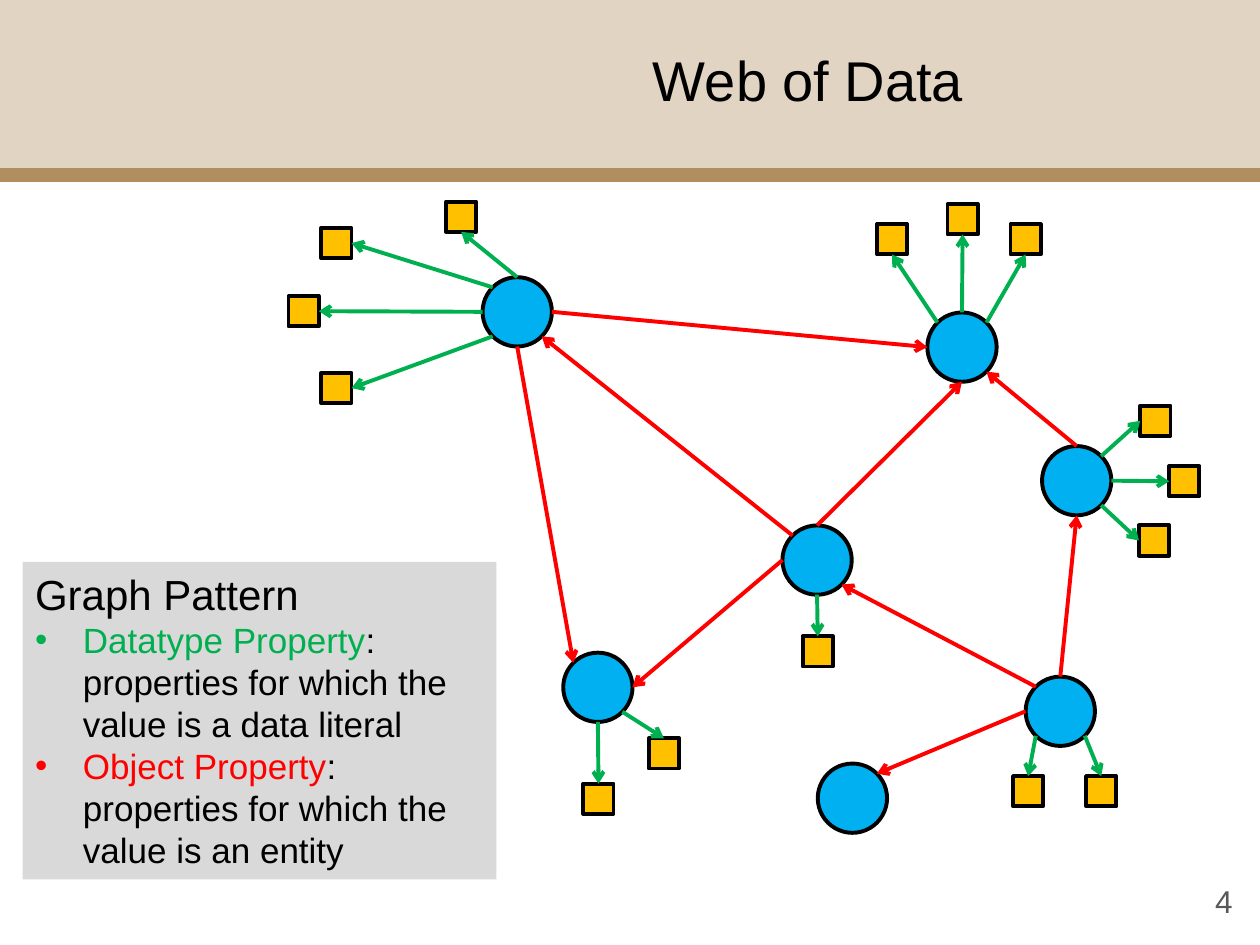
from math import sqrt
from lxml.etree import SubElement
from pptx import Presentation
from pptx.dml.color import RGBColor
from pptx.enum.shapes import MSO_CONNECTOR as Connector, MSO_SHAPE as Shape
from pptx.enum.text import MSO_ANCHOR as Anchor, MSO_AUTO_SIZE as AutoSize, PP_ALIGN as Align
from pptx.oxml.ns import qn
from pptx.util import Inches, Pt

FONT = "Arial"
COLORS = {
    "band": "B18E5F", "panel": "D9D9D9", "text": "000000", "number": "595959",
    "entity": "00B0F0", "literal": "FFC000", "outline": "000000",
    "datatype": "00B050", "object": "FF0000",
}
TITLE = "Web of Data"
SLIDE_NUMBER = "4"
PANEL_HEADING = "Graph Pattern"
PANEL_ITEMS = [
    ("Datatype Property", ": properties for which the value is a data literal", "datatype"),
    ("Object Property", ": properties for which the value is an entity", "object"),
]

# Entities: left and top of each circle
ENTITY_SIZE = 0.55
ENTITIES = {
    "north west": (3.83, 2.2), "north east": (7.36, 2.48), "south west": (4.47, 5.18),
    "centre": (6.21, 4.17), "east": (8.27, 3.54), "south east": (8.14, 5.37),
    "south": (6.49, 6.06),
}
# Literals: entity, side it leaves from, left, top, side of the square it reaches
LITERAL_SIZE = 0.24
LITERALS = [
    ("north west", "top left", 2.55, 1.81, "right"),
    ("north west", "top", 3.54, 1.6, "bottom"),
    ("north west", "bottom left", 2.55, 2.96, "right"),
    ("north west", "left", 2.29, 2.35, "right"),
    ("north east", "top left", 6.96, 1.78, "bottom"),
    ("north east", "top", 7.52, 1.62, "bottom"),
    ("north east", "top right", 8.02, 1.78, "bottom"),
    ("east", "top right", 9.05, 3.22, "left"),
    ("east", "right", 9.28, 3.7, "left"),
    ("east", "bottom right", 9.04, 4.17, "left"),
    ("south west", "bottom right", 5.15, 5.86, "top"),
    ("south west", "bottom", 4.63, 6.22, "top"),
    ("centre", "bottom", 6.37, 5.05, "top"),
    ("south east", "bottom right", 8.62, 6.16, "top"),
    ("south east", "bottom left", 8.04, 6.16, "top"),
]
# Links between entities: from, side, to, side
LINKS = [
    ("north west", "right", "north east", "left"),
    ("north west", "bottom", "south west", "top left"),
    ("centre", "left", "south west", "right"),
    ("centre", "top left", "north west", "bottom right"),
    ("centre", "top", "north east", "bottom"),
    ("east", "top", "north east", "bottom right"),
    ("south east", "top", "east", "bottom"),
    ("south east", "top left", "centre", "bottom right"),
    ("south east", "left", "south", "top right"),
]
SQUARE_SITES = {"top": 0, "left": 1, "bottom": 2, "right": 3}


def rgb(name):
    return RGBColor.from_string(COLORS[name])


def rim_point(entity, side):
    """Point on the circle's rim at a side or diagonal."""
    words = side.split()
    x = ("right" in words) - ("left" in words)
    y = ("bottom" in words) - ("top" in words)
    reach = ENTITY_SIZE / 2 / sqrt(x * x + y * y)
    left, top = ENTITIES[entity]
    return left + ENTITY_SIZE / 2 + x * reach, top + ENTITY_SIZE / 2 + y * reach


def add_box(slide, kind, left, top, width, height, fill, outline=None):
    shape = slide.shapes.add_shape(kind, Inches(left), Inches(top), Inches(width), Inches(height))
    shape.shadow.inherit = False
    shape.fill.solid()
    shape.fill.fore_color.rgb = rgb(fill)
    if outline:
        shape.line.color.rgb = rgb(outline)
        shape.line.width = Pt(2.25)
    else:
        shape.line.fill.background()
    return shape


def add_line(slide, start, end, color, width=2.25, arrow=True):
    line = slide.shapes.add_connector(Connector.STRAIGHT, *map(Inches, start + end))
    line.line.color.rgb = rgb(color)
    line.line.width = Pt(width)
    if arrow:
        SubElement(line.line._get_or_add_ln(), qn("a:tailEnd"), type="arrow")
    SubElement(line._element.spPr, qn("a:effectLst"))
    return line


def format_run(run, size, color):
    run.font.name = FONT
    run.font.size = Pt(size)
    run.font.color.rgb = rgb(color)


def add_header(slide):
    band = add_box(slide, Shape.RECTANGLE, 0, 0, 10, 1.42, "band")
    color = band._element.spPr.find(qn("a:solidFill"))[0]
    SubElement(color, qn("a:alpha"), val="38000")
    add_line(slide, (0, 1.39), (10, 1.39), "band", 8, arrow=False)

    title = slide.shapes.title
    title.left, title.top, title.width, title.height = map(Inches, (2.83, 0, 7.17, 1.25))
    title.text_frame.text = TITLE
    title.text_frame.vertical_anchor = Anchor.MIDDLE
    paragraph = title.text_frame.paragraphs[0]
    paragraph.alignment = Align.CENTER
    format_run(paragraph.runs[0], 32, "text")
    # Title goes in front of the band
    slide.shapes._spTree.append(title._element)


def add_slide_number(slide):
    box = slide.shapes.add_textbox(Inches(9.33), Inches(6.95), Inches(0.55), Inches(0.5))
    box.text_frame.word_wrap = True
    box.text_frame.text = SLIDE_NUMBER
    paragraph = box.text_frame.paragraphs[0]
    paragraph.alignment = Align.RIGHT
    format_run(paragraph.runs[0], 18, "number")


def add_graph(slide):
    for left, top in ENTITIES.values():
        add_box(slide, Shape.OVAL, left, top, ENTITY_SIZE, ENTITY_SIZE, "entity", "outline")
    for entity, side, left, top, square_side in LITERALS:
        square = add_box(slide, Shape.RECTANGLE, left, top, LITERAL_SIZE, LITERAL_SIZE,
                         "literal", "outline")
        arrow = add_line(slide, rim_point(entity, side), (left, top), "datatype")
        arrow.end_connect(square, SQUARE_SITES[square_side])
    for source, source_side, target, target_side in LINKS:
        add_line(slide, rim_point(source, source_side), rim_point(target, target_side), "object")


def add_panel(slide):
    panel = add_box(slide, Shape.RECTANGLE, 0.18, 4.46, 3.76, 2.52, "panel")
    frame = panel.text_frame
    frame.word_wrap = True
    frame.auto_size = AutoSize.SHAPE_TO_FIT_TEXT
    frame.vertical_anchor = Anchor.TOP
    frame.text = PANEL_HEADING
    frame.paragraphs[0].alignment = Align.LEFT
    format_run(frame.paragraphs[0].runs[0], 24, "text")
    for term, definition, color in PANEL_ITEMS:
        paragraph = frame.add_paragraph()
        paragraph.alignment = Align.LEFT
        properties = paragraph._p.get_or_add_pPr()
        properties.set("marL", str(Inches(0.38)))
        properties.set("indent", str(-Inches(0.38)))
        SubElement(properties, qn("a:buFont"), typeface=FONT)
        SubElement(properties, qn("a:buChar"), char="•")
        for text, text_color in ((term, color), (definition, "text")):
            run = paragraph.add_run()
            run.text = text
            format_run(run, 20, text_color)


def main():
    presentation = Presentation()
    presentation.slide_width, presentation.slide_height = Inches(10), Inches(7.5)
    slide = presentation.slides.add_slide(presentation.slide_layouts[5])
    add_header(slide)
    add_slide_number(slide)
    add_graph(slide)
    add_panel(slide)
    presentation.save("out.pptx")


if __name__ == "__main__":
    main()
